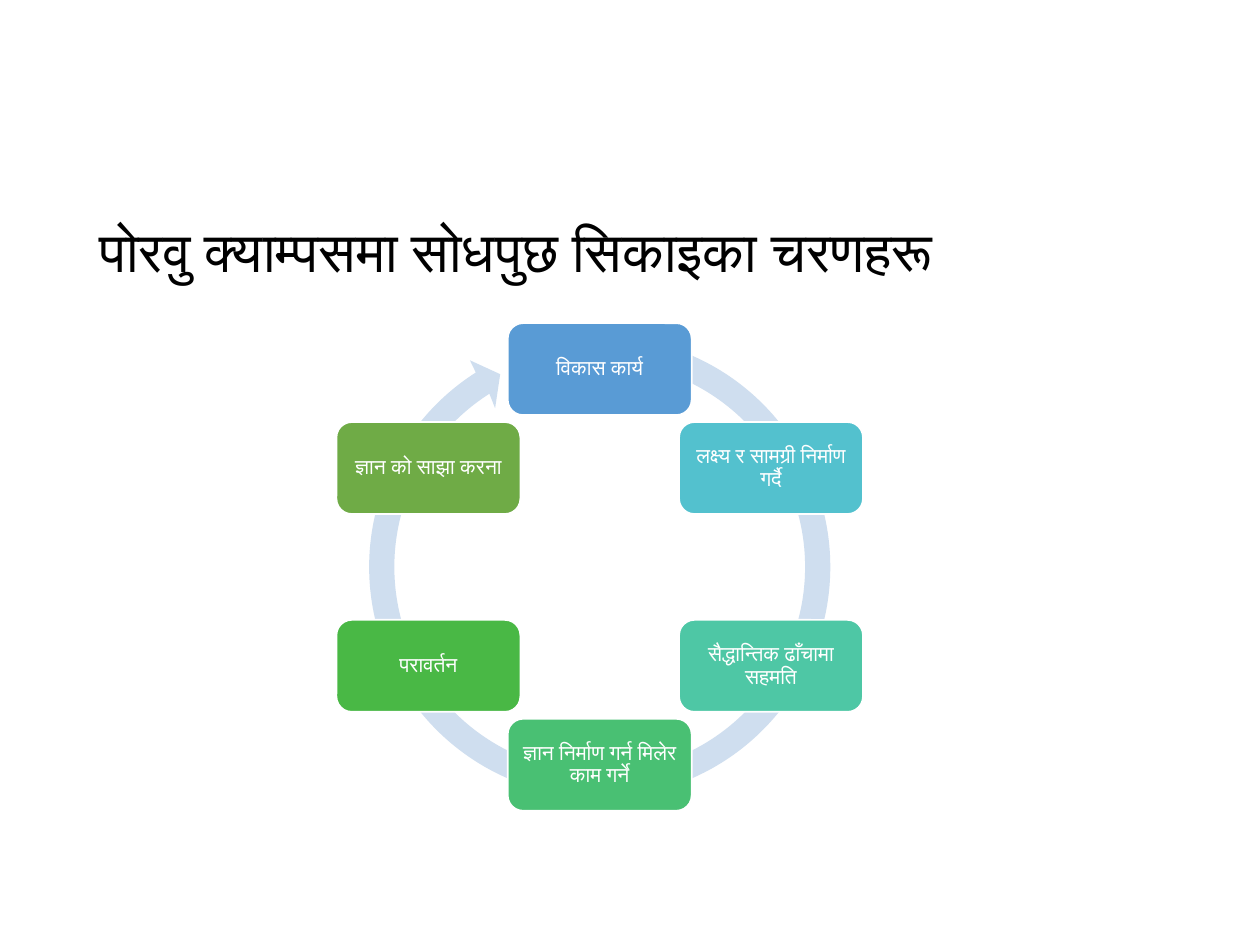
import math

import lxml.etree
import pptx
import pptx.dml.color
import pptx.enum.shapes
import pptx.enum.text
import pptx.oxml.ns
import pptx.util
from pptx.util import Inches

COLORS = {
    "title": "000000",
    "ring": "CFDEEF",
    "white": "FFFFFF",
    "development": "599BD5",
    "goals": "53C1CE",
    "framework": "4EC7A5",
    "building": "49C073",
    "reflection": "49B845",
    "sharing": "6FAB46",
}
STEPS = [
    ("विकास कार्य", "development"),
    ("लक्ष्य र सामग्री निर्माण गर्दै", "goals"),
    ("सैद्धान्तिक ढाँचामा सहमति", "framework"),
    ("ज्ञान निर्माण गर्न मिलेर काम गर्ने", "building"),
    ("परावर्तन", "reflection"),
    ("ज्ञान को साझा करना", "sharing"),
]
CENTER_X, CENTER_Y = 4.76, 4.5
STEP_RADIUS = 1.57
STEP_WIDTH, STEP_HEIGHT = 1.46, 0.73
RING_LEFT, RING_TOP, RING_SIZE = 2.83, 2.56, 3.88
RING_OUTER, RING_INNER = 1.83, 1.63
RING_START, RING_END, RING_ARCS = -74.5, 237.5, 4
ARROW_HEAD = [(3.73, 2.86), (3.97, 2.97), (3.93, 3.24)]


def color(name):
    return pptx.dml.color.RGBColor.from_string(COLORS[name])


def write_text(shape, text, size, font, ink, align, inset_x, inset_y):
    frame = shape.text_frame
    frame.word_wrap = True
    frame.vertical_anchor = pptx.enum.text.MSO_ANCHOR.MIDDLE
    frame.margin_left = frame.margin_right = Inches(inset_x)
    frame.margin_top = frame.margin_bottom = Inches(inset_y)
    paragraph = frame.paragraphs[0]
    paragraph.alignment = align
    paragraph.line_spacing = 0.9
    run = paragraph.add_run()
    run.text = text
    run.font.size = pptx.util.Pt(size)
    run.font.name = font
    run.font.color.rgb = color(ink)


def paint(shape, fill):
    shape.shadow.inherit = False
    shape.fill.solid()
    shape.fill.fore_color.rgb = color(fill)


def around(radius, degrees):
    angle = math.radians(degrees)
    return CENTER_X + radius * math.cos(angle), CENTER_Y + radius * math.sin(angle)


def arc_curves(radius, start, end):
    sweep = (end - start) / RING_ARCS
    handle = 4 / 3 * math.tan(math.radians(sweep) / 4)
    reach = radius * math.hypot(1, handle)
    lean = math.degrees(math.atan(handle))
    for index in range(RING_ARCS):
        first = start + index * sweep
        last = first + sweep
        yield [around(reach, first + lean), around(reach, last - lean), around(radius, last)]


def add_command(outline, tag, points=()):
    command = lxml.etree.SubElement(outline, pptx.oxml.ns.qn(f"a:{tag}"))
    for x, y in points:
        point = lxml.etree.SubElement(command, pptx.oxml.ns.qn("a:pt"))
        point.set("x", str(Inches(x - RING_LEFT)))
        point.set("y", str(Inches(y - RING_TOP)))


def add_title(slide, text):
    title = slide.shapes.add_textbox(Inches(0.69), Inches(1.47), Inches(7.84), Inches(1.09))
    write_text(title, text, size=32, font="Arial", ink="title",
               align=pptx.enum.text.PP_ALIGN.LEFT, inset_x=0.1, inset_y=0.05)


def add_ring(slide):
    left, top = Inches(RING_LEFT), Inches(RING_TOP)
    right, bottom = left + Inches(RING_SIZE), top + Inches(RING_SIZE)
    builder = slide.shapes.build_freeform(left, top)
    builder.add_line_segments([(right, top), (right, bottom), (left, bottom)])
    ring = builder.convert_to_shape()
    paint(ring, "ring")
    ring.line.fill.background()

    outline = next(ring.element.iter(pptx.oxml.ns.qn("a:path")))
    for command in list(outline):
        outline.remove(command)
    add_command(outline, "moveTo", [around(RING_OUTER, RING_START)])
    for curve in arc_curves(RING_OUTER, RING_START, RING_END):
        add_command(outline, "cubicBezTo", curve)
    for corner in ARROW_HEAD + [around(RING_INNER, RING_END)]:
        add_command(outline, "lnTo", [corner])
    for curve in arc_curves(RING_INNER, RING_END, RING_START):
        add_command(outline, "cubicBezTo", curve)
    add_command(outline, "close")


def add_step(slide, text, fill, degrees):
    x, y = around(STEP_RADIUS, degrees)
    step = slide.shapes.add_shape(
        pptx.enum.shapes.MSO_SHAPE.ROUNDED_RECTANGLE,
        Inches(x - STEP_WIDTH / 2), Inches(y - STEP_HEIGHT / 2),
        Inches(STEP_WIDTH), Inches(STEP_HEIGHT))
    step.adjustments[0] = 0.167
    paint(step, fill)
    step.line.color.rgb = color("white")
    step.line.width = pptx.util.Pt(1)
    write_text(step, text, size=12, font="Calibri", ink="white",
               align=pptx.enum.text.PP_ALIGN.CENTER, inset_x=0.05, inset_y=0.05)


def main():
    deck = pptx.Presentation()
    deck.slide_width, deck.slide_height = Inches(10), Inches(7.5)
    slide = deck.slides.add_slide(deck.slide_layouts[6])
    add_title(slide, "पोरवु क्याम्पसमा सोधपुछ सिकाइका चरणहरू")
    add_ring(slide)
    for index, (text, fill) in enumerate(STEPS):
        add_step(slide, text, fill, index * 360 / len(STEPS) - 90)
    deck.save("out.pptx")


if __name__ == "__main__":
    main()
